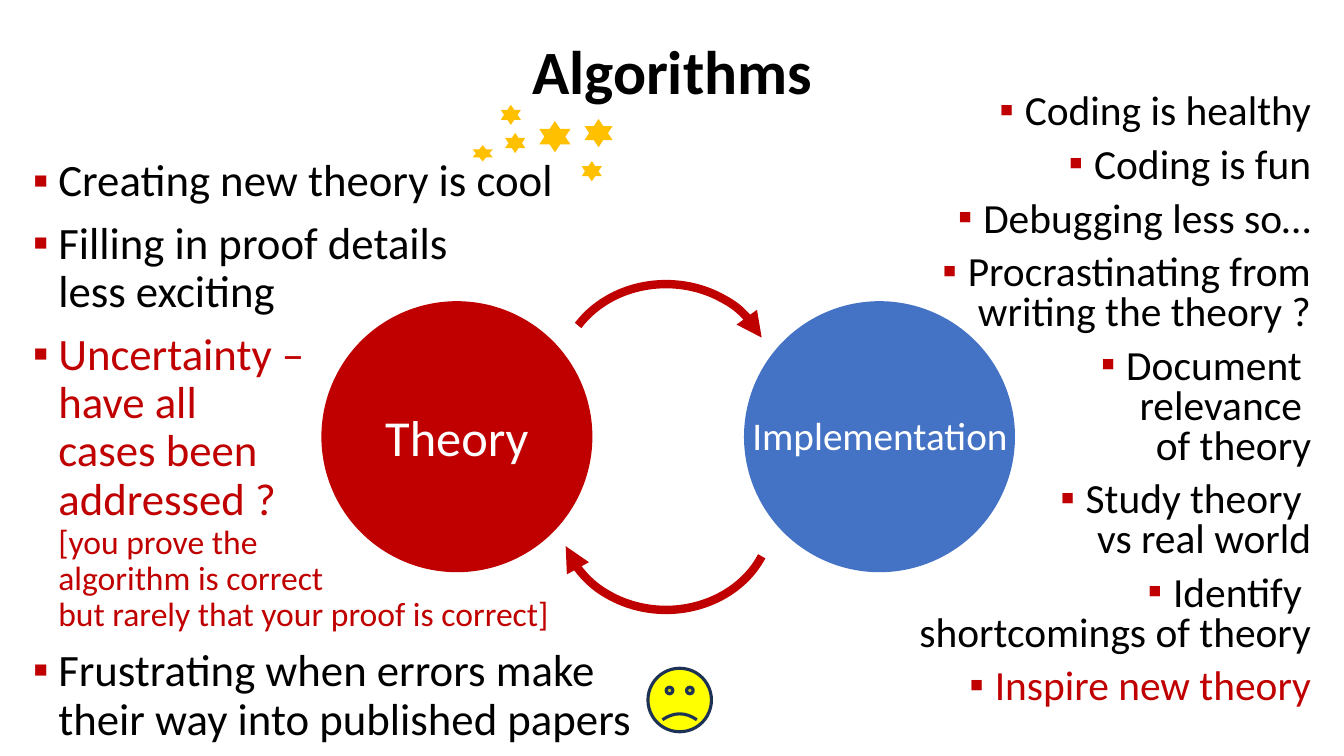
from lxml.etree import SubElement
from pptx import Presentation
from pptx.dml.color import RGBColor
from pptx.enum.shapes import MSO_SHAPE
from pptx.enum.text import MSO_ANCHOR, PP_ALIGN
from pptx.oxml.ns import qn
from pptx.util import Cm, Pt

FONT = "Calibri"
RED, BLUE, GOLD, YELLOW, NAVY = "C00000", "4472C4", "FFC000", "FFFF00", "1E3256"
BLACK, WHITE = "000000", "FFFFFF"

# Paragraphs are lists of (text, size, colour) runs.
THEORY_POINTS = [
    [("Creating new theory is cool", 32, BLACK)],
    [("Filling in proof details \nless exciting", 32, BLACK)],
    [("Uncertainty – \nhave all \ncases been \naddressed ?\n", 32, RED),
     ("[you prove the \nalgorithm is correct \n"
      "but rarely that your proof is correct]", 24, RED)],
    [("Frustrating when errors make their way into published papers", 32, BLACK)],
]
CODING_POINTS = [[(text, 29.6, BLACK)] for text in (
    "Coding is healthy",
    "Coding is fun",
    "Debugging less so…",
    "Procrastinating from writing the theory ?",
    "Document \nrelevance \nof theory",
    "Study theory \nvs real world",
    "Identify \nshortcomings of theory",
)] + [[("Inspire new theory", 29.6, RED)]]

# left, top, width, height in cm
STARS = [
    (12.73, 3.35, 0.51, 0.51),
    (12.62, 2.64, 0.51, 0.51),
    (11.91, 3.66, 0.51, 0.41),
    (13.59, 3.05, 0.79, 0.79),
    (14.66, 4.06, 0.51, 0.51),
    (14.73, 3.0, 0.71, 0.71),
]


def rgb(colour):
    return RGBColor.from_string(colour)


def cm_box(*lengths):
    return [Cm(length) for length in lengths]


def add_run(p, text, size, colour, bold=False):
    """Add text to a paragraph, with a line break at each newline."""
    for i, line in enumerate(text.split("\n")):
        if i:
            p.add_line_break()
        if line:
            r = p.add_run()
            r.text = line
            r.font.name, r.font.size, r.font.bold = FONT, Pt(size), bold
            r.font.color.rgb = rgb(colour)


def set_label(tf, text, size, colour, bold=False, anchor=MSO_ANCHOR.MIDDLE):
    tf.word_wrap = True
    tf.vertical_anchor = anchor
    p = tf.paragraphs[0]
    p.alignment = PP_ALIGN.CENTER
    add_run(p, text, size, colour, bold)
    return p


def set_bullet(p, colour):
    pPr = p._p.get_or_add_pPr()
    indent = Cm(0.64)
    pPr.set("marL", str(indent))
    pPr.set("indent", str(-indent))
    SubElement(SubElement(pPr, qn("a:buClr")), qn("a:srgbClr"), val=colour)
    SubElement(pPr, qn("a:buFont"), typeface="Arial")
    SubElement(pPr, qn("a:buChar"), char="▪")


def add_bullets(shapes, box, points, align, spacing):
    tf = shapes.add_textbox(*cm_box(*box)).text_frame
    tf.word_wrap = True
    for i, runs in enumerate(points):
        p = tf.add_paragraph() if i else tf.paragraphs[0]
        p.alignment, p.line_spacing, p.space_before = align, spacing, Pt(10)
        set_bullet(p, RED)
        for run in runs:
            add_run(p, *run)


def add_figure(shapes, kind, box, fill=None, line=None, width=1, adj=()):
    sp = shapes.add_shape(kind, *cm_box(*box))
    sp.shadow.inherit = False
    for i, value in enumerate(adj):
        sp.adjustments[i] = value
    if fill:
        sp.fill.solid()
        sp.fill.fore_color.rgb = rgb(fill)
    else:
        sp.fill.background()
    if line:
        sp.line.color.rgb = rgb(line)
        sp.line.width = Pt(width)
    else:
        sp.line.fill.background()
    return sp


def add_arc_arrow(shapes, top, flip, adj):
    sp = add_figure(shapes, MSO_SHAPE.ARC, (14.12, top, 5.33, 4.7),
                    line=RED, width=6, adj=adj)
    spPr = sp._element.spPr
    spPr.find(qn("a:xfrm")).set(flip, "1")
    SubElement(spPr.find(qn("a:ln")), qn("a:headEnd"), type="triangle")


def add_circles(s):
    shapes = s.shapes.add_group_shape().shapes
    theory, _ = [add_figure(shapes, MSO_SHAPE.OVAL, (left, 7.59, 6.83, 6.83), fill)
                 for left, fill in ((8.1, RED), (18.75, BLUE))]
    set_label(theory.text_frame, "Theory", 36, WHITE)
    label = shapes.add_textbox(*cm_box(18.49, 10.24, 7.37, 1.45))
    set_label(label.text_frame, "Implementation", 28, WHITE, anchor=MSO_ANCHOR.TOP)


def add_title(s, text):
    title = s.shapes.title
    title.left, title.top, title.width, title.height = cm_box(2.34, 0.03, 29.21, 3.68)
    set_label(title.text_frame, text, 44, BLACK, bold=True).line_spacing = 0.9


def main():
    prs = Presentation()
    prs.slide_width, prs.slide_height = Cm(33.87), Cm(19.05)
    s = prs.slides.add_slide(prs.slide_layouts[5])

    add_title(s, "Algorithms")
    add_bullets(s.shapes, (0.58, 3.86, 16.54, 15.6), THEORY_POINTS,
                PP_ALIGN.LEFT, 0.9)
    add_arc_arrow(s.shapes, 7.16, "flipH", (121.55, 197.67))
    add_arc_arrow(s.shapes, 10.67, "flipV", (117.84, 202.51))
    add_circles(s)
    add_bullets(s.shapes, (20.45, 2.24, 12.85, 16), CODING_POINTS,
                PP_ALIGN.RIGHT, 0.8)
    stars = s.shapes.add_group_shape().shapes
    for box in STARS:
        add_figure(stars, MSO_SHAPE.STAR_6_POINT, box, GOLD)
    add_figure(s.shapes, MSO_SHAPE.SMILEY_FACE, (16.33, 16.84, 1.6, 1.6),
               YELLOW, NAVY, 2.25, adj=(-0.05,))

    prs.save("out.pptx")


if __name__ == "__main__":
    main()
